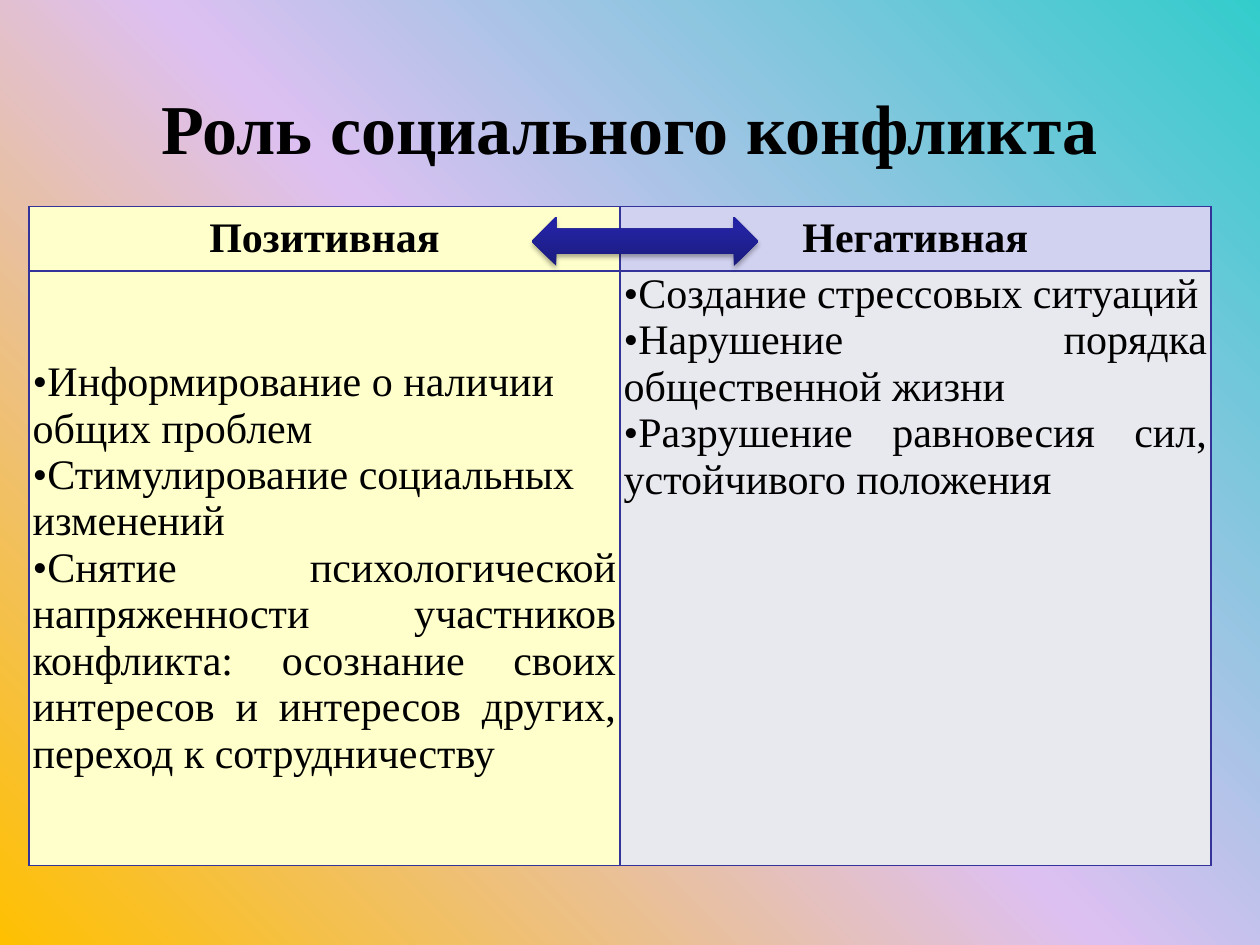
"""Build a slide comparing the positive and negative roles of social conflict."""
from dataclasses import dataclass

from lxml.etree import SubElement
from pptx import Presentation
from pptx.dml.color import RGBColor
from pptx.enum.shapes import MSO_SHAPE as Shape
from pptx.enum.text import MSO_ANCHOR as Anchor, PP_ALIGN as Align
from pptx.oxml import parse_xml
from pptx.oxml.ns import nsdecls, qn
from pptx.util import Inches, Pt


@dataclass(frozen=True)
class Theme:
    font: str = "Times New Roman"
    title_size: int = 40
    body_size: int = 24
    ink: str = "000000"
    border: str = "333399"
    positive: str = "FFFFCC"
    negative_head: str = "D1D1F0"
    negative_body: str = "E8E8EF"
    backdrop: tuple = ((0, "FFC000"), (50, "DDC0F2"), (100, "33CCCC"))
    arrow: tuple = ((0, "1B1B7E"), (80, "2323A3"), (100, "2020A6"))


theme = Theme()


def write(frame, lines, size, bold):
    for index, (text, align) in enumerate(lines):
        paragraph = frame.paragraphs[0] if index == 0 else frame.add_paragraph()
        paragraph.alignment = align
        run = paragraph.add_run()
        run.text = text
        run.font.name = theme.font
        run.font.size = Pt(size)
        run.font.bold = bold
        run.font.color.rgb = RGBColor.from_string(theme.ink)


def paint_gradient(fill, parent, stops, angle):
    fill.gradient()
    fill.gradient_angle = angle
    stop_list = next(parent.iter(qn("a:gsLst")))
    for stop in list(stop_list):
        stop_list.remove(stop)
    for position, color in stops:
        stop = SubElement(stop_list, qn("a:gs"), pos=str(position * 1000))
        SubElement(stop, qn("a:srgbClr"), val=color)


prs = Presentation()
prs.slide_width, prs.slide_height = Inches(10), Inches(7.5)
slide = prs.slides.add_slide(prs.slide_layouts[6])
paint_gradient(slide.background.fill, slide.element, theme.backdrop, 45)

roles = slide.shapes.add_table(2, 2, Inches(0.23), Inches(1.64), Inches(9.38), Inches(5.23)).table
for column in roles.columns:
    column.width = Inches(4.69)
for row, height in zip(roles.rows, (0.51, 4.72)):
    row.height = Inches(height)

positive_effects = [
    ("•Информирование о наличии общих проблем", Align.LEFT),
    ("•Стимулирование социальных изменений", Align.LEFT),
    ("•Снятие психологической напряженности участников конфликта: осознание своих "
     "интересов и интересов других, переход к сотрудничеству", Align.JUSTIFY),
]
negative_effects = [
    ("•Создание стрессовых ситуаций", Align.JUSTIFY),
    ("•Нарушение порядка общественной жизни", Align.JUSTIFY),
    ("•Разрушение равновесия сил, устойчивого положения", Align.JUSTIFY),
]
contents = [
    (0, 0, [("Позитивная", Align.CENTER)], theme.positive, Anchor.MIDDLE),
    (0, 1, [("Негативная", Align.CENTER)], theme.negative_head, Anchor.MIDDLE),
    (1, 0, positive_effects, theme.positive, Anchor.MIDDLE),
    (1, 1, negative_effects, theme.negative_body, Anchor.TOP),
]
for row, column, lines, color, anchor in contents:
    cell = roles.cell(row, column)
    cell.margin_left = cell.margin_right = Inches(0.03)
    cell.margin_top = cell.margin_bottom = 0
    cell.vertical_anchor = anchor
    write(cell.text_frame, lines, theme.body_size, row == 0)
    properties = cell._tc.get_or_add_tcPr()
    for side in ("lnL", "lnR", "lnT", "lnB"):
        edge = SubElement(properties, qn(f"a:{side}"), w=str(Pt(1)))
        SubElement(SubElement(edge, qn("a:solidFill")), qn("a:srgbClr"), val=theme.border)
    cell.fill.solid()
    cell.fill.fore_color.rgb = RGBColor.from_string(color)

title = slide.shapes.add_textbox(Inches(0.62), Inches(0.62), Inches(8.75), Inches(0.77)).text_frame
title.word_wrap = True
title.vertical_anchor = Anchor.MIDDLE
write(title, [("Роль социального конфликта", Align.CENTER)], theme.title_size, True)

opposition = slide.shapes.add_shape(
    Shape.LEFT_RIGHT_ARROW, Inches(4.22), Inches(1.72), Inches(1.8), Inches(0.39))
paint_gradient(opposition.fill, opposition.element, theme.arrow, 90)
opposition.line.fill.background()
opposition.element.spPr.append(parse_xml(
    f'<a:effectLst {nsdecls("a")}><a:outerShdw blurRad="{Pt(3.1)}" dist="{Pt(1.8)}" '
    f'dir="5400000" rotWithShape="0"><a:srgbClr val="{theme.ink}"><a:alpha val="35000"/>'
    '</a:srgbClr></a:outerShdw></a:effectLst>'))

prs.save("out.pptx")
